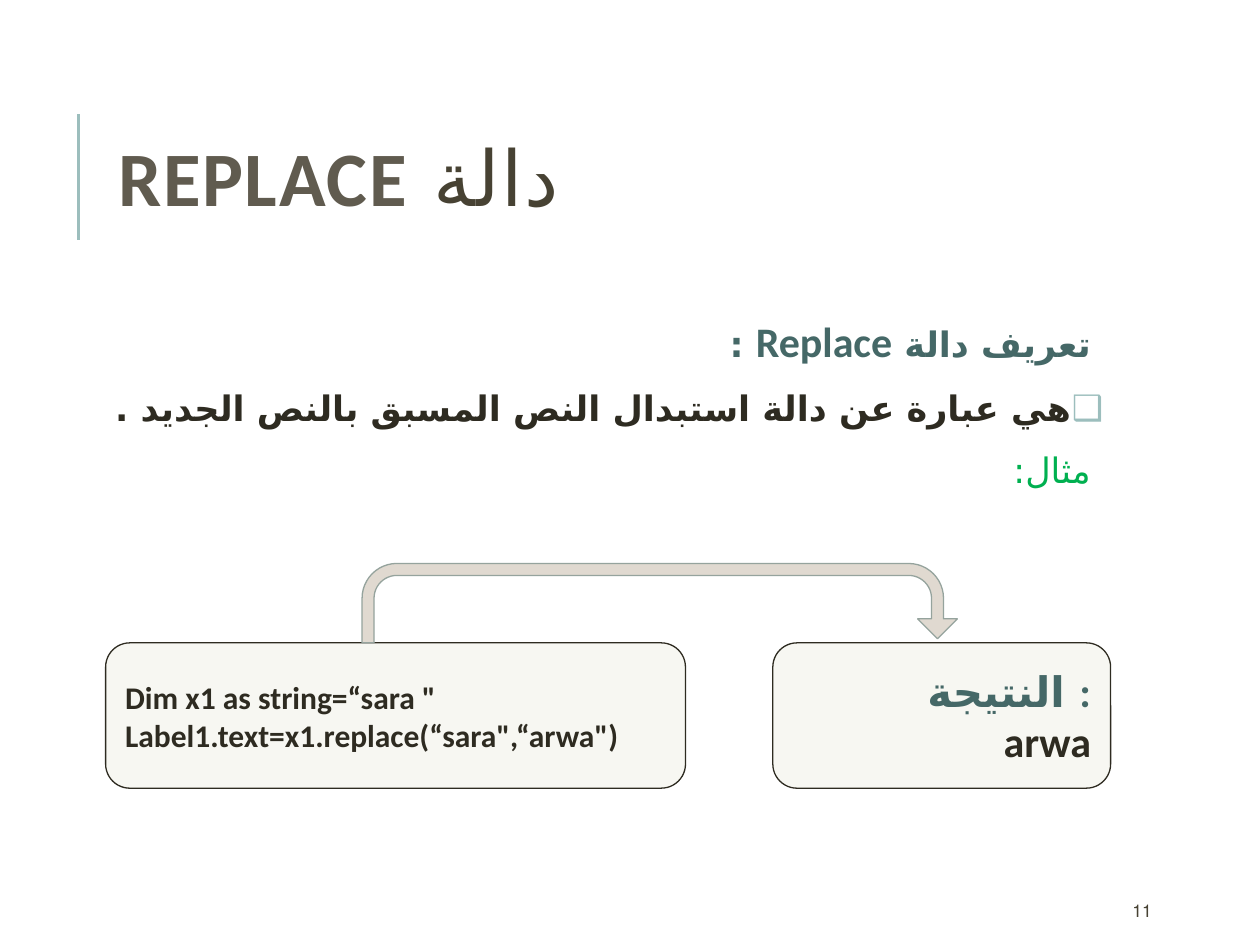
"""Build the slide that explains the Replace function with an example and its result."""
from pptx import Presentation
from pptx.dml.color import RGBColor
from pptx.enum.shapes import MSO_CONNECTOR as Connector, MSO_SHAPE as Shape
from pptx.enum.text import MSO_ANCHOR as Anchor, PP_ALIGN as Align
from pptx.oxml.ns import qn
from pptx.util import Cm, Pt
from lxml.etree import SubElement

FONT = "Calibri"
ARABIC_FONT = "DejaVu Sans"
COLORS = {
    "ink": "2E2B21", "title": "474233", "keyword": "605B4F", "heading": "456867",
    "example": "00B050", "accent": "9CBEBD", "panel": "F7F7F2",
    "arrow": "E0D9D0", "arrow_edge": "95A39D",
}
LEFT, WIDTH = 2.13, 20.24
PANEL_TOP, PANEL_HEIGHT = 12.96, 2.93
ARROW_HEIGHT = 1.6
ARROW_ADJUSTMENTS = (0.151, 0.25, 0.25, 0.438, 0.948)

TITLE = [{"rtl": True, "line": 0.8, "runs": [
    ("دالة ", 44, "title", False), ("REPLACE", 44, "keyword", True)]}]
BODY_STYLE = {"align": Align.RIGHT, "rtl": True, "line": 0.9}
BODY = [
    {**BODY_STYLE, "bullet": " ", "runs": [
        ("تعريف دالة ", 20, "heading", True),
        ("Replace", 24, "heading", True),
        (" : ", 20, "heading", True)]},
    {**BODY_STYLE, "bullet": "❑", "runs": [
        ("هي عبارة عن دالة استبدال النص المسبق بالنص الجديد .", 20, "ink", True)]},
    {**BODY_STYLE, "bullet": " ", "runs": [("مثال: ", 20, "example", False)]},
]
NUMBER = [{"rtl": True, "runs": [("11", 10, "title", False)]}]
CODE = [
    {"runs": [("Dim x1 as string=“sara \"", 18, "ink", True)]},
    {"rtl": True, "runs": [("Label1.text=x1.replace(“sara\",“arwa\")", 18, "ink", True)]},
]
RESULT = [
    {"align": Align.RIGHT, "runs": [("النتيجة :", 24, "heading", True)]},
    {"align": Align.RIGHT, "runs": [("arwa", 24, "ink", True)]},
]
TEXT_BOXES = [
    ((LEFT, 1.63, WIDTH, 4.17), TITLE, Anchor.MIDDLE, 0.25, 1),
    ((LEFT, 6.35, WIDTH, 11.18), BODY, Anchor.TOP, 0.13, 0),
    ((22.58, 17.98, 2.03, 0.76), NUMBER, Anchor.MIDDLE, 0.25, 0),
]
PANELS = [(LEFT, 11.69, CODE), (15.58, 6.81, RESULT)]


def color(name):
    return RGBColor.from_string(COLORS[name])


def is_arabic(text):
    return any("\u0600" <= letter <= "\u06ff" for letter in text)


def add_bullet(para, mark):
    properties = para._p.get_or_add_pPr()
    properties.set("marL", str(Cm(0.25)))
    properties.set("indent", str(-Cm(0.25)))
    para.space_before, para.space_after = Pt(12), Pt(2)
    tint = SubElement(properties, qn("a:buClr"))
    SubElement(tint, qn("a:srgbClr")).set("val", COLORS["accent"])
    SubElement(properties, qn("a:buFont")).set("typeface", ARABIC_FONT)
    SubElement(properties, qn("a:buChar")).set("char", mark)


def write(frame, paragraphs, anchor, spacing=0):
    frame.word_wrap = True
    frame.vertical_anchor = anchor
    for index, content in enumerate(paragraphs):
        para = frame.add_paragraph() if index else frame.paragraphs[0]
        para.alignment = content.get("align", Align.LEFT)
        para.line_spacing = content.get("line", 1.0)
        if content.get("rtl"):
            para._p.get_or_add_pPr().set("rtl", "1")
        if "bullet" in content:
            add_bullet(para, content["bullet"])
        for text, size, tone, bold in content["runs"]:
            span = para.add_run()
            span.text = text
            font = span.font
            font.name, font.size, font.bold = FONT, Pt(size), bold
            font.color.rgb = color(tone)
            if is_arabic(text):
                SubElement(font._element, qn("a:cs")).set("typeface", ARABIC_FONT)
            if spacing:
                font._element.set("spc", str(spacing * 100))


def add_text(page, place, paragraphs, anchor, inset, spacing):
    frame = page.shapes.add_textbox(*map(Cm, place)).text_frame
    frame.margin_left = frame.margin_right = Cm(inset)
    frame.margin_top = frame.margin_bottom = Cm(0.13)
    write(frame, paragraphs, anchor, spacing)


def add_figure(page, kind, place, fill, edge):
    figure = page.shapes.add_shape(kind, *map(Cm, place))
    figure.shadow.inherit = False
    figure.fill.solid()
    figure.fill.fore_color.rgb = color(fill)
    figure.line.color.rgb = color(edge)
    figure.line.width = Pt(0.75)
    return figure


def main():
    deck = Presentation()
    deck.slide_width, deck.slide_height = Cm(25.4), Cm(19.05)
    page = deck.slides.add_slide(deck.slide_layouts[6])

    rule = page.shapes.add_connector(
        Connector.STRAIGHT, Cm(1.58), Cm(4.83), Cm(1.58), Cm(2.29))
    rule.line.color.rgb = color("accent")
    rule.line.width = Pt(1.5)
    SubElement(rule._element.spPr, qn("a:effectLst"))

    for text_box in TEXT_BOXES:
        add_text(page, *text_box)
    for left, width, paragraphs in PANELS:
        place = (left, PANEL_TOP, width, PANEL_HEIGHT)
        panel = add_figure(page, Shape.ROUNDED_RECTANGLE, place, "panel", "ink")
        write(panel.text_frame, paragraphs, Anchor.MIDDLE)

    place = (7.3, PANEL_TOP - ARROW_HEIGHT, 12, ARROW_HEIGHT)
    arrow = add_figure(page, Shape.U_TURN_ARROW, place, "arrow", "arrow_edge")
    for index, value in enumerate(ARROW_ADJUSTMENTS):
        arrow.adjustments[index] = value

    deck.save("out.pptx")


if __name__ == "__main__":
    main()
